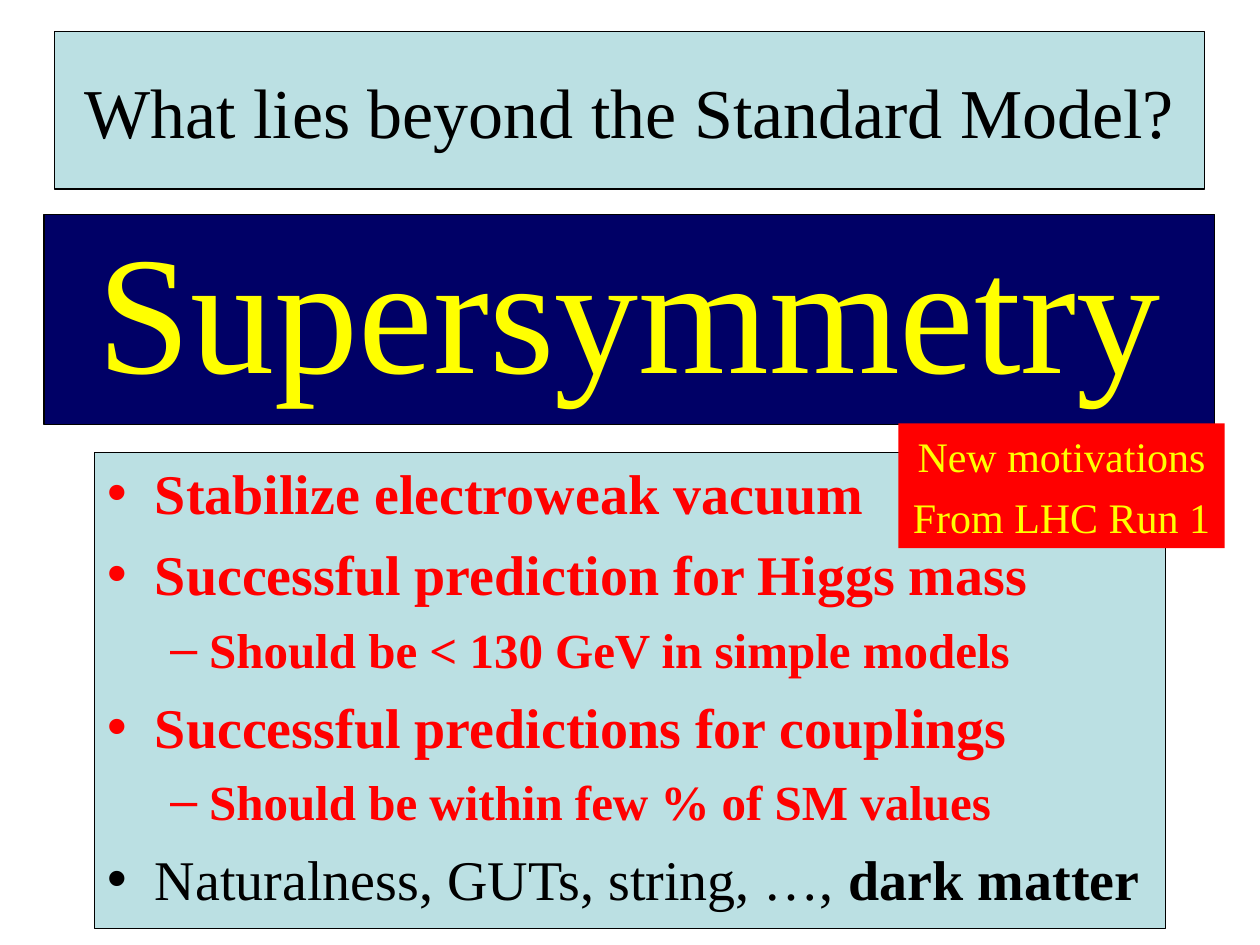
from lxml import etree
from pptx import Presentation
from pptx.dml.color import RGBColor
from pptx.enum.shapes import MSO_SHAPE
from pptx.enum.text import MSO_ANCHOR, MSO_AUTO_SIZE, PP_ALIGN
from pptx.oxml.ns import qn
from pptx.util import Inches, Pt

RECT = MSO_SHAPE.RECTANGLE
TOP, MIDDLE = MSO_ANCHOR.TOP, MSO_ANCHOR.MIDDLE
NO_FIT = MSO_AUTO_SIZE.NONE
CENTER = PP_ALIGN.CENTER
FONT = "Times New Roman"
BLACK, RED, YELLOW = "000000", "FF0000", "FFFF00"
PALE, NAVY = "BBE0E3", "000066"
TWO_CONTENT = 3
GAP = 0.25  # space before a paragraph, as a share of its text size

# Per level: bullet, text size, left margin and hanging indent in inches
LEVELS = [("•", 32, 0.38, -0.38), ("–", 28, 0.81, -0.31)]

# Level, colour, and runs as (text, bold)
REASONS = [
    (0, RED, [("Stabilize electroweak vacuum", True)]),
    (0, RED, [("Successful prediction for Higgs mass", True)]),
    (1, RED, [("Should be < 130 GeV in simple models", True)]),
    (0, RED, [("Successful predictions for couplings", True)]),
    (1, RED, [("Should be within few % of SM values", True)]),
    (0, BLACK, [("Naturalness, GUTs, string, …, ", False), ("dark matter", True)]),
]


def rgb(value):
    return RGBColor.from_string(value)


def style_box(sp, at, fill, line=None, anchor=MIDDLE, wrap=True):
    sp.left, sp.top, sp.width, sp.height = (Inches(v) for v in at)
    sp.fill.solid()
    sp.fill.fore_color.rgb = rgb(fill)
    if line:
        sp.line.color.rgb = rgb(line)
        sp.line.width = Pt(0.75)
    else:
        sp.line.fill.background()
    tf = sp.text_frame
    tf.auto_size = NO_FIT
    tf.word_wrap = wrap
    tf.vertical_anchor = anchor
    return tf


def style_run(r, size, color, bold=False):
    r.font.name = FONT
    r.font.size = Pt(size)
    r.font.bold = bold
    r.font.color.rgb = rgb(color)


def set_gap(p, index, size):
    p.space_before = Pt(size * GAP if index else 0)


def centered_text(tf, text, size, color, spacing=1.0):
    tf.text = text
    for i, p in enumerate(tf.paragraphs):
        p.alignment = CENTER
        p.line_spacing = spacing
        set_gap(p, i, size)
        for r in p.runs:
            style_run(r, size, color)


def set_bullet(p, char, margin, indent):
    pPr = p._p.get_or_add_pPr()
    pPr.set("marL", str(Inches(margin)))
    pPr.set("indent", str(Inches(indent)))
    etree.SubElement(pPr, qn("a:buChar")).set("char", char)


def bullet_list(tf, items):
    for i, (level, color, runs) in enumerate(items):
        char, size, margin, indent = LEVELS[level]
        p = tf.add_paragraph() if i else tf.paragraphs[0]
        p.level = level
        set_bullet(p, char, margin, indent)
        set_gap(p, i, size)
        for text, bold in runs:
            r = p.add_run()
            r.text = text
            style_run(r, size, color, bold)


def main():
    prs = Presentation()
    prs.slide_width, prs.slide_height = Inches(10), Inches(7.5)
    s = prs.slides.add_slide(prs.slide_layouts[TWO_CONTENT])
    title, theory, reasons = list(s.placeholders)[:3]

    # Title
    tf = style_box(title, (0.43, 0.25, 9.13, 1.25), PALE, BLACK)
    centered_text(tf, "What lies beyond the Standard Model?", 40, BLACK)

    # Theory banner
    tf = style_box(theory, (0.35, 1.7, 9.29, 1.67), NAVY, BLACK)
    centered_text(tf, "Supersymmetry", 96, YELLOW, spacing=0.9)
    set_bullet(tf.paragraphs[0], "•", 0, 0)
    pPr = tf.paragraphs[0]._p.pPr
    pPr.replace(pPr.find(qn("a:buChar")), etree.Element(qn("a:buNone")))

    # Reasons
    tf = style_box(reasons, (0.75, 3.59, 8.5, 3.78), PALE, BLACK, anchor=TOP)
    bullet_list(tf, REASONS)

    # Red tag over the corner of the list
    tag = s.shapes.add_shape(RECT, 0, 0, 0, 0)
    tag.shadow.inherit = False
    tf = style_box(tag, (7.13, 3.36, 2.59, 0.99), RED, wrap=False)
    centered_text(tf, "New motivations\nFrom LHC Run 1", 24, YELLOW)

    prs.save("out.pptx")


if __name__ == "__main__":
    main()
